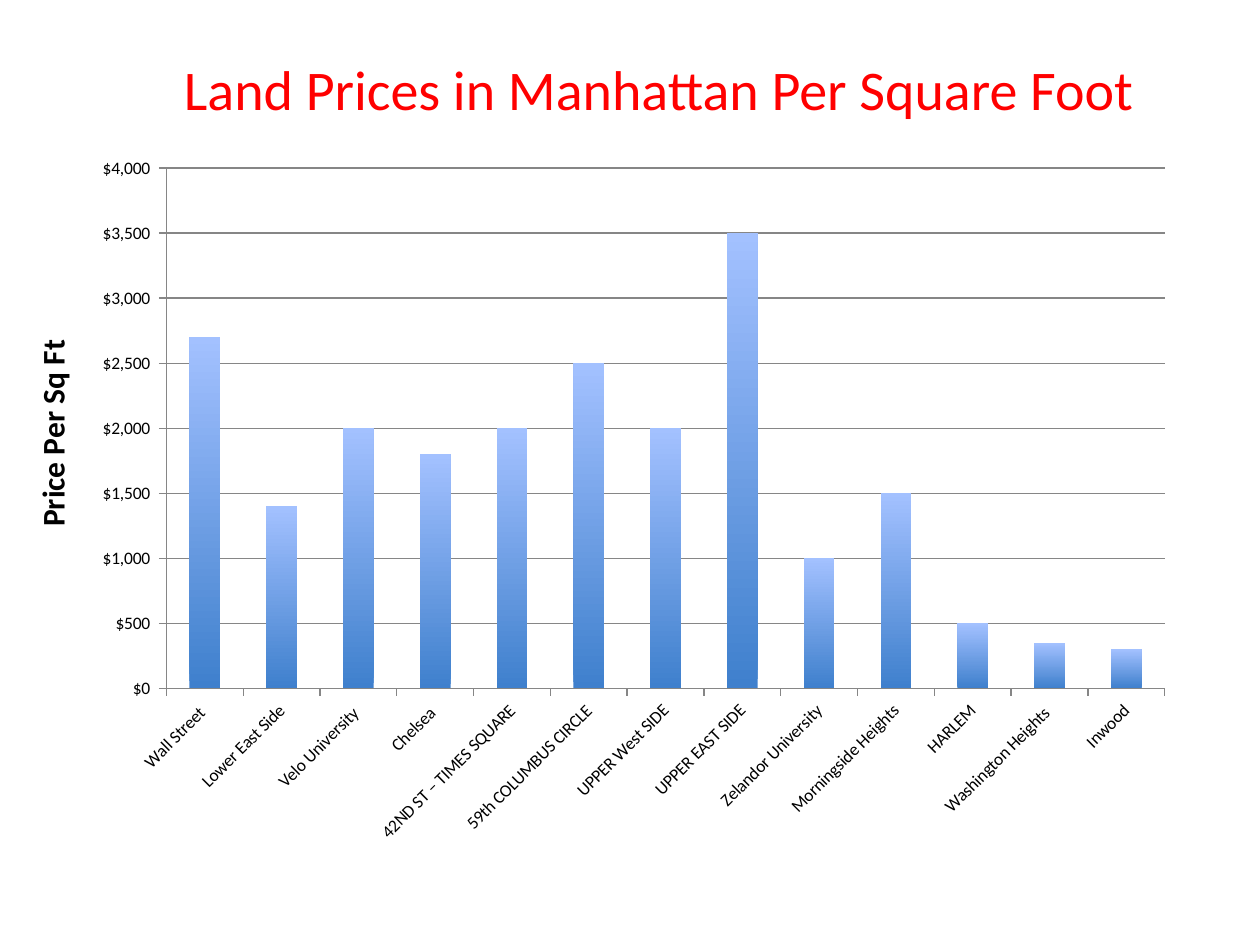
from lxml import etree
from pptx import Presentation
from pptx.chart.data import CategoryChartData
from pptx.dml.color import RGBColor
from pptx.enum.chart import XL_CHART_TYPE, XL_TICK_MARK
from pptx.enum.text import MSO_ANCHOR, PP_ALIGN
from pptx.oxml import parse_xml
from pptx.util import Inches, Pt

COLUMN = XL_CHART_TYPE.COLUMN_CLUSTERED
OUTSIDE = XL_TICK_MARK.OUTSIDE
MIDDLE = MSO_ANCHOR.MIDDLE
LEFT = PP_ALIGN.LEFT
CHART_NS = "http://schemas.openxmlformats.org/drawingml/2006/chart"
NAME = "Price Per Sq Ft"
PRICES = {
    "Wall Street ": 2700,
    "Lower East Side": 1400,
    "Velo University ": 2000,
    "Chelsea ": 1800,
    "42ND ST – TIMES SQUARE": 2000,
    "59th COLUMBUS CIRCLE": 2500,
    "UPPER West SIDE": 2000,
    "UPPER EAST SIDE": 3500,
    "Zelandor University": 1000,
    "Morningside Heights": 1500,
    "HARLEM": 500,
    "Washington Heights ": 350,
    "Inwood": 300,
}


def color(code):
    return RGBColor.from_string(code)


def layout(**parts):
    """Return a manual chart layout; parts are child tags in schema order."""
    root = etree.Element(f"{{{CHART_NS}}}layout", nsmap={"c": CHART_NS})
    manual = etree.SubElement(root, f"{{{CHART_NS}}}manualLayout")
    for tag, val in parts.items():
        etree.SubElement(manual, f"{{{CHART_NS}}}{tag}").set("val", str(val))
    return parse_xml(etree.tostring(root))


deck = Presentation()
deck.slide_width, deck.slide_height = Inches(10), Inches(7.5)
slide = deck.slides.add_slide(deck.slide_layouts[5])

# Price chart
data = CategoryChartData()
data.categories = list(PRICES)
data.add_series(NAME, list(PRICES.values()))
chart = slide.shapes.add_chart(
    COLUMN, Inches(0), Inches(0.7), Inches(9.93), Inches(6.1), data
).chart
chart.has_title = False
chart.has_legend = False
chart.font.name = "Calibri"
chart.font.size = Pt(10)
chart.font.color.rgb = color("000000")

# Columns
plot = chart.plots[0]
plot.gap_width = 150
plot.vary_by_categories = False
fill = plot.series[0].format.fill
fill.gradient()
fill.gradient_angle = 90
for stop, code in zip(fill.gradient_stops, ("3F80CD", "A3C1FF")):
    stop.color.rgb = color(code)

# Axes
places, prices = chart.category_axis, chart.value_axis
prices.minimum_scale, prices.maximum_scale = 0, 4000
prices.major_unit = 500
prices.has_major_gridlines = True
for part in (places, prices, prices.major_gridlines):
    part.format.line.color.rgb = color("868686")
    part.format.line.width = Pt(0.75)
for axis in (places, prices):
    axis.major_tick_mark = OUTSIDE
    axis.tick_labels.font.size = Pt(10)
prices.tick_labels.number_format = '"$"#,##0_);[Red]\\("$"#,##0\\)'
prices.tick_labels.number_format_is_linked = False
for body in places._element.xpath("c:txPr/a:bodyPr"):
    body.set("rot", "-2700000")

# Axis title
prices.has_title = True
frame = prices.axis_title.text_frame
frame.text = NAME
font = frame.paragraphs[0].font
font.name, font.size, font.bold = "Calibri", Pt(18), True
font.color.rgb = color("000000")
for body in prices._element.xpath("c:title//a:bodyPr"):
    body.set("rot", "-5400000")
    body.set("vert", "horz")

# Fixed places for the axis title and the plot area
heading = prices.axis_title._element
area = chart._chartSpace.chart.plotArea
spots = (
    (heading, 1, layout(xMode="edge", yMode="edge", x=0.02, y=0.32)),
    (area, 0, layout(layoutTarget="inner", xMode="edge", yMode="edge",
                     x=0.133, y=0.104, w=0.798, h=0.677)),
)
for parent, index, spot in spots:
    for old in parent.xpath("c:layout"):
        parent.remove(old)
    parent.insert(index, spot)

# Title
title = slide.shapes.title
title.left, title.top = Inches(1.36), Inches(0.38)
title.width, title.height = Inches(7.84), Inches(0.64)
frame = title.text_frame
frame.text = "Land Prices in Manhattan Per Square Foot"
frame.word_wrap = False
frame.vertical_anchor = MIDDLE
line = frame.paragraphs[0]
line.alignment = LEFT
line.font.name, line.font.size = "Calibri", Pt(32)
line.font.color.rgb = color("FF0000")

deck.save("out.pptx")
